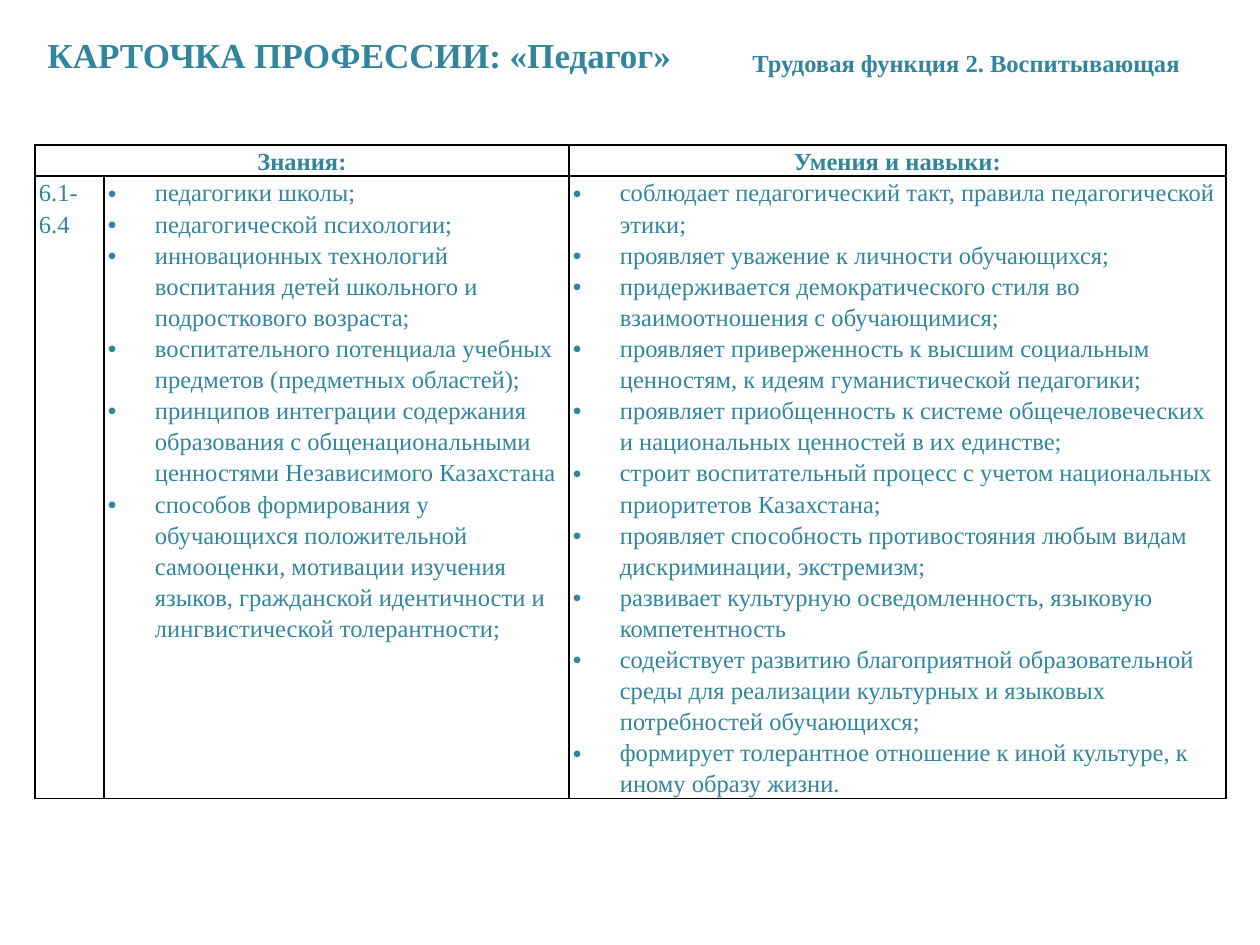
from lxml.etree import SubElement
from pptx import Presentation
from pptx.dml.color import RGBColor
from pptx.enum.text import MSO_ANCHOR, PP_ALIGN
from pptx.oxml.ns import qn
from pptx.util import Pt

EMU_PER_PX = 914400 / 126
FONT = "Times New Roman"
TEAL = "31859C"
BLACK = "000000"
CODES = "6.1-6.4"
KNOWLEDGE = [
    "педагогики школы;",
    "педагогической психологии;",
    "инновационных технологий воспитания детей школьного и подросткового возраста;",
    "воспитательного потенциала учебных предметов (предметных областей);",
    "принципов интеграции содержания образования с общенациональными ценностями Независимого Казахстана",
    "способов формирования у обучающихся положительной самооценки, мотивации изучения языков, "
    "гражданской идентичности и лингвистической толерантности;",
]
SKILLS = [
    "соблюдает педагогический такт, правила педагогической этики;",
    "проявляет уважение к личности обучающихся;",
    "придерживается демократического стиля во взаимоотношения с обучающимися;",
    "проявляет приверженность к высшим социальным ценностям, к идеям гуманистической педагогики;",
    "проявляет приобщенность к системе общечеловеческих и национальных ценностей в их единстве;",
    "строит воспитательный процесс с учетом национальных приоритетов Казахстана;",
    "проявляет способность противостояния любым видам дискриминации, экстремизм;",
    "развивает культурную осведомленность, языковую компетентность",
    "содействует развитию благоприятной образовательной среды для реализации культурных и языковых "
    "потребностей обучающихся;",
    "формирует толерантное отношение к иной культуре, к иному образу жизни.",
]


def px(n):
    return round(n * EMU_PER_PX)


def color(value):
    return RGBColor.from_string(value)


def write(tf, lines, size=14, bold=False, align=PP_ALIGN.LEFT, spacing=1.15, indent=0):
    for i, line in enumerate(lines):
        p = tf.paragraphs[0] if i == 0 else tf.add_paragraph()
        p.alignment = align
        p.line_spacing = spacing
        r = p.add_run()
        r.text = line
        r.font.name = FONT
        r.font.size = Pt(size)
        r.font.bold = bold
        r.font.color.rgb = color(TEAL)
        if indent:
            pPr = p._p.get_or_add_pPr()
            pPr.set("marL", str(px(indent)))
            pPr.set("indent", str(-px(indent)))
            SubElement(pPr, qn("a:buFont"), typeface="Arial")
            SubElement(pPr, qn("a:buChar"), char="•")


def add_text(s, x, y, w, h, text, wrap=True, anchor=MSO_ANCHOR.TOP, **fmt):
    tf = s.shapes.add_textbox(px(x), px(y), px(w), px(h)).text_frame
    tf.word_wrap = wrap
    tf.vertical_anchor = anchor
    write(tf, [text], **fmt)


def add_heading(s, x, y):
    add_text(s, x, y, 654, 55, "КАРТОЧКА ПРОФЕССИИ: «Педагог»", wrap=False,
             anchor=MSO_ANCHOR.MIDDLE, size=20, bold=True, spacing=1.0)
    add_text(s, x + 705, y + 10, 520, 47, "Трудовая функция 2. Воспитывающая", bold=True)


def style_cell(cell):
    cell.margin_left = cell.margin_right = px(4)
    cell.margin_top = cell.margin_bottom = 0
    tcPr = cell._tc.get_or_add_tcPr()
    for side in ("lnL", "lnR", "lnT", "lnB"):
        ln = SubElement(tcPr, qn(f"a:{side}"), w=str(Pt(1)))
        SubElement(SubElement(ln, qn("a:solidFill")), qn("a:srgbClr"), val=BLACK)
    cell.fill.background()


def add_competence_table(s, x, y):
    widths, heights = (69, 465, 657), (31, 622)
    table = s.shapes.add_table(2, 3, px(x), px(y), px(sum(widths)), px(sum(heights))).table
    table.first_row = table.horz_banding = False
    for column, w in zip(table.columns, widths):
        column.width = px(w)
    for row, h in zip(table.rows, heights):
        row.height = px(h)
    for cell in table.iter_cells():
        style_cell(cell)
    table.cell(0, 0).merge(table.cell(0, 1))
    for col, title in ((0, "Знания:"), (2, "Умения и навыки:")):
        write(table.cell(0, col).text_frame, [title], bold=True, align=PP_ALIGN.CENTER)
    write(table.cell(1, 0).text_frame, [CODES])
    for col, items in ((1, KNOWLEDGE), (2, SKILLS)):
        write(table.cell(1, col).text_frame, items, indent=47)


def main():
    prs = Presentation()
    prs.slide_width, prs.slide_height = px(1260), px(945)
    s = prs.slides.add_slide(prs.slide_layouts[6])
    add_competence_table(s, 35, 145)
    add_heading(s, 35, 27)
    prs.save("out.pptx")


if __name__ == "__main__":
    main()
